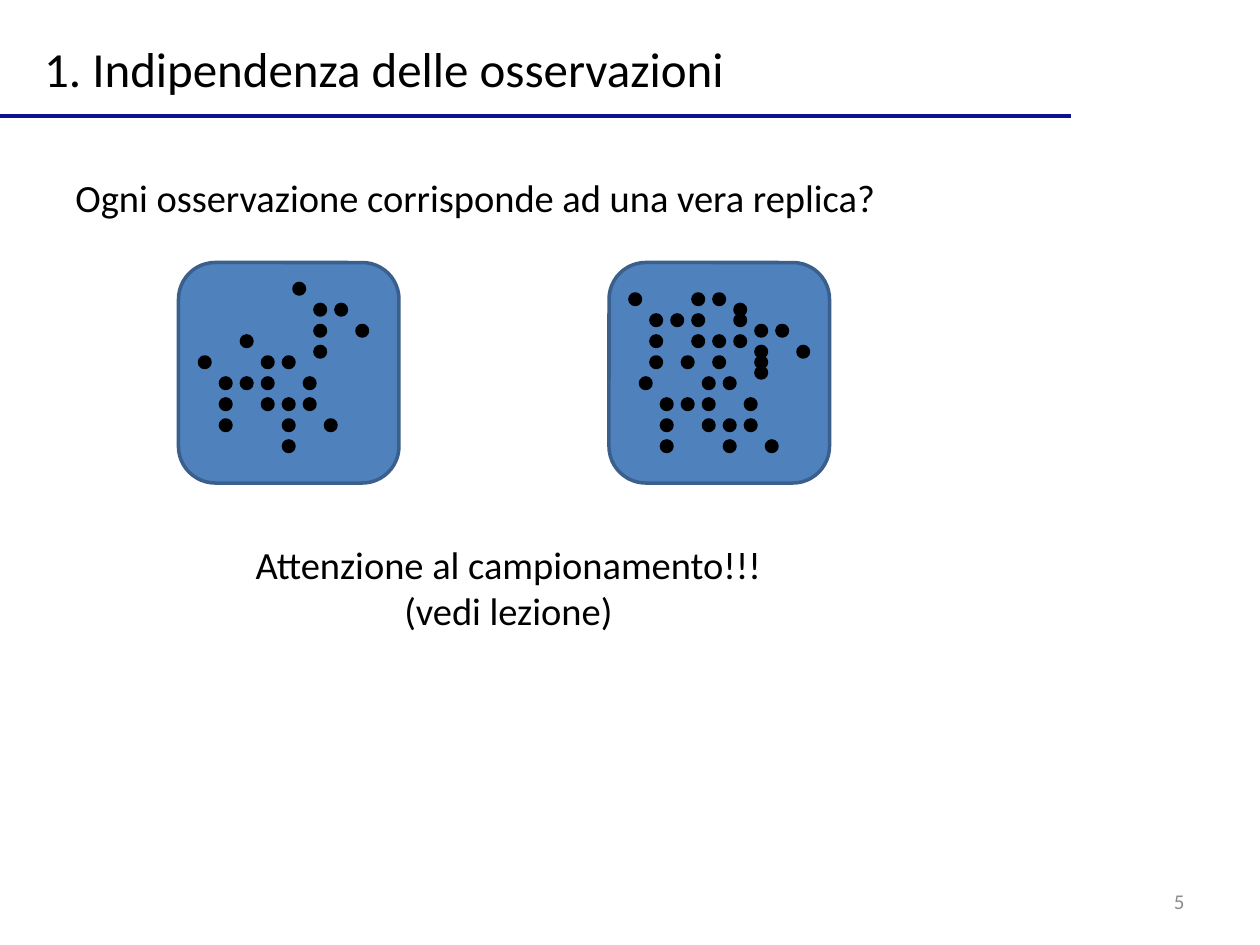
from pptx import Presentation
from pptx.dml.color import RGBColor
from pptx.enum.shapes import MSO_CONNECTOR, MSO_SHAPE
from pptx.enum.text import MSO_ANCHOR, MSO_AUTO_SIZE, PP_ALIGN
from pptx.oxml.ns import qn
from pptx.util import Inches, Pt
from lxml import etree

ROUNDED, OVAL = MSO_SHAPE.ROUNDED_RECTANGLE, MSO_SHAPE.OVAL
LEFT, CENTER, RIGHT = PP_ALIGN.LEFT, PP_ALIGN.CENTER, PP_ALIGN.RIGHT
MIDDLE = MSO_ANCHOR.MIDDLE
NO_AUTOFIT = MSO_AUTO_SIZE.NONE

THEME = {
    "font": "Calibri", "title": 28, "body": 22, "number": 12, "line": 2,
    "text": "000000", "muted": "8C8C8C", "rule": "0C1290",
    "panel": "4F81BD", "panel_edge": "3A5F8C", "dot": "000000",
}

# Content: text, box (left, top, width, height), size, colour, alignment
TITLE = ("1. Indipendenza delle osservazioni", (0.25, 0.25, 5.65, 0.57), "title", "text", LEFT)
TEXTS = [
    ("Ogni osservazione corrisponde ad una vera replica?", (0.5, 1.33, 6.69, 0.47), "body", "text", LEFT),
    ("Attenzione al campionamento!!!\n(vedi lezione)", (1.83, 4.24, 4.41, 0.84), "body", "text", CENTER),
    ("5", (7.17, 6.95, 2.33, 0.4), "number", "muted", RIGHT),
]

# Sample panels lie on a grid of 1/12 inch; dots map each row to its columns
CELL = 1 / 12
PANEL_TOP, PANEL_SIZE = 25, 21
PANELS = [
    {"left": 17, "dots": {
        2: [11], 4: [13, 15], 6: [13, 17], 7: [6], 8: [13], 9: [2, 8, 10],
        11: [4, 6, 8, 12], 13: [4, 8, 10, 12], 15: [4, 10, 14], 17: [10]}},
    {"left": 58, "dots": {
        3: [2, 8, 10], 4: [12], 5: [4, 6, 8, 12], 6: [14, 16], 7: [4, 8, 10, 12],
        8: [14, 18], 9: [4, 7, 10, 14], 10: [14], 11: [3, 9, 11],
        13: [5, 7, 9, 13], 15: [5, 9, 11, 13], 17: [5, 11, 15]}},
]


def colour(name):
    return RGBColor.from_string(THEME[name])


def write(shape, text, box, size, text_colour, alignment):
    shape.left, shape.top, shape.width, shape.height = map(Inches, box)
    frame = shape.text_frame
    frame.text = text
    frame.word_wrap = size == "number"
    frame.auto_size = NO_AUTOFIT
    frame.vertical_anchor = MIDDLE
    for paragraph in frame.paragraphs:
        paragraph.alignment = alignment
        for run in paragraph.runs:
            run.font.name = THEME["font"]
            run.font.size = Pt(THEME[size])
            run.font.color.rgb = colour(text_colour)


def add_grid_shape(slide, kind, column, row, cells, fill, edge):
    shape = slide.shapes.add_shape(
        kind, *(Inches(value * CELL) for value in (column, row, cells, cells)))
    shape.shadow.inherit = False
    shape.fill.solid()
    shape.fill.fore_color.rgb = colour(fill)
    shape.line.color.rgb = colour(edge)
    shape.line.width = Pt(THEME["line"])


def main():
    presentation = Presentation()
    presentation.slide_width, presentation.slide_height = Inches(10), Inches(7.5)
    slide = presentation.slides.add_slide(presentation.slide_layouts[5])

    # Title and the rule below it
    write(slide.shapes.title, *TITLE)
    rule = slide.shapes.add_connector(
        MSO_CONNECTOR.STRAIGHT, Inches(0), Inches(0.92), Inches(8.5), Inches(0.92))
    rule.line.color.rgb = colour("rule")
    rule.line.width = Pt(THEME["line"])
    etree.SubElement(rule.line._get_or_add_ln().getparent(), qn("a:effectLst"))

    # Body text and slide number
    for text, box, *style in TEXTS:
        write(slide.shapes.add_textbox(*map(Inches, box)), text, box, *style)

    # Panels with their observations
    for panel in PANELS:
        add_grid_shape(slide, ROUNDED, panel["left"], PANEL_TOP, PANEL_SIZE, "panel", "panel_edge")
        for row, columns in panel["dots"].items():
            for column in columns:
                add_grid_shape(slide, OVAL, panel["left"] + column, PANEL_TOP + row, 1, "dot", "dot")

    presentation.save("out.pptx")


if __name__ == "__main__":
    main()
